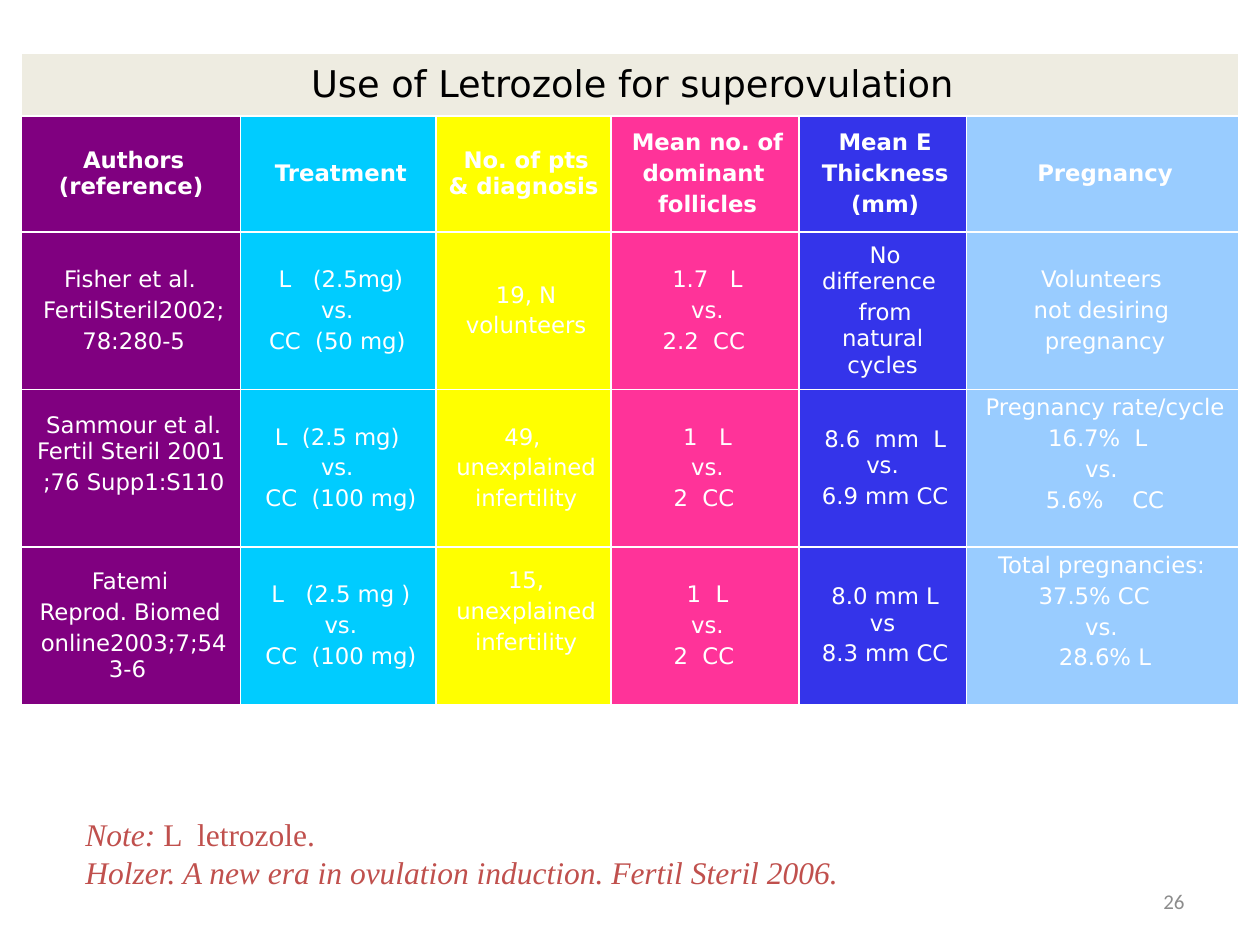
from lxml import etree
from pptx import Presentation
from pptx.dml.color import RGBColor
from pptx.enum.text import MSO_ANCHOR, PP_ALIGN
from pptx.oxml.ns import qn
from pptx.util import Inches, Pt

MIDDLE, TOP = MSO_ANCHOR.MIDDLE, MSO_ANCHOR.TOP
LEFT, CENTER, RIGHT = PP_ALIGN.LEFT, PP_ALIGN.CENTER, PP_ALIGN.RIGHT
COLORS = {"title": "EEECE1", "black": "000000", "white": "FFFFFF", "note": "C0504D", "number": "8C8C8C"}
COLUMNS = [(1.74, "800080"), (1.55, "00CCFF"), (1.39, "FFFF00"),
           (1.49, "FF3399"), (1.33, "3434EA"), (2.16, "99CCFF")]
ROW_HEIGHTS = [0.5, 0.92, 1.25, 1.25, 1.25]
TITLE = "Use of Letrozole for superovulation"
ROWS = [
    [["Authors (reference)"], ["Treatment"], ["No. of pts & diagnosis"],
     ["Mean no. of", "dominant ", "follicles"], ["Mean E", "Thickness", "(mm)"], ["Pregnancy"]],
    [["Fisher et al. ", "FertilSteril2002;", "78:280-5"], ["L   (2.5mg)", "vs. ", "CC  (50 mg) "],
     ["19, N", "volunteers"], ["1.7   L", "vs.", "2.2  CC "],
     ["No difference ", "from natural cycles"], ["Volunteers ", "not desiring ", "pregnancy"]],
    [["Sammour et al. Fertil Steril 2001", ";76 Supp1:S110"], ["L  (2.5 mg) ", "vs. ", "CC  (100 mg)"],
     ["49, ", "unexplained", "infertility"], ["1   L", "vs.", "2  CC "],
     ["8.6  mm  L vs.", "6.9 mm CC"], ["Pregnancy rate/cycle", "16.7%  L  ", "vs. ", "5.6%    CC"]],
    [["Fatemi ", "Reprod. Biomed ", "online2003;7;543-6 "], ["L   (2.5 mg )", " vs. ", "CC  (100 mg)"],
     ["15,", "unexplained", "infertility"], ["1  L", "vs.", "2  CC "],
     ["8.0 mm L vs", "8.3 mm CC"], ["Total pregnancies: ", "37.5% CC   ", "vs. ", "28.6% L"]],
]
RAISED = {(3, 0), (3, 5), (4, 2), (4, 5)}
NOTE = [[("Note: ", True), ("L  letrozole.", False)],
        [("Holzer. A new era in ovulation induction. Fertil Steril 2006.", True)]]


def add_run(p, text, font, size, color, bold=False, italic=False):
    r = p.add_run()
    r.text = text
    r.font.name, r.font.size = font, Pt(size)
    r.font.bold, r.font.italic = bold, italic
    r.font.color.rgb = RGBColor.from_string(color)


def next_paragraph(tf, i):
    return tf.add_paragraph() if i else tf.paragraphs[0]


def add_borders(cell):
    tc_pr = cell._tc.get_or_add_tcPr()
    for side in ("lnL", "lnR", "lnT", "lnB"):
        line = etree.SubElement(tc_pr, qn(f"a:{side}"), w=str(Pt(1)))
        fill = etree.SubElement(line, qn("a:solidFill"))
        etree.SubElement(fill, qn("a:srgbClr"), val=COLORS["white"])


def fill_cell(cell, lines, fill, color, size, bold=False):
    add_borders(cell)
    cell.fill.solid()
    cell.fill.fore_color.rgb = RGBColor.from_string(fill)
    cell.vertical_anchor = MIDDLE
    for i, line in enumerate(lines):
        p = next_paragraph(cell.text_frame, i)
        p.alignment = CENTER
        p.space_before = Pt(size * 0.2)
        p._p.get_or_add_pPr().set("indent", str(Inches(0.04)))
        add_run(p, line, "DejaVu Sans", size, color, bold)


def add_text(s, box, paragraphs, font, size, color, align, anchor):
    tf = s.shapes.add_textbox(*map(Inches, box)).text_frame
    tf.word_wrap = True
    tf.vertical_anchor = anchor
    for i, runs in enumerate(paragraphs):
        p = next_paragraph(tf, i)
        p.alignment = align
        for text, italic in runs:
            add_run(p, text, font, size, color, italic=italic)


def main():
    prs = Presentation()
    prs.slide_width, prs.slide_height = Inches(10), Inches(7.5)
    s = prs.slides.add_slide(prs.slide_layouts[6])

    width = sum(w for w, _ in COLUMNS)
    table = s.shapes.add_table(len(ROW_HEIGHTS), len(COLUMNS), Inches(0.17), Inches(0.42),
                               Inches(width), Inches(sum(ROW_HEIGHTS))).table
    for row, height in zip(table.rows, ROW_HEIGHTS):
        row.height = Inches(height)
    for column, (w, _) in zip(table.columns, COLUMNS):
        column.width = Inches(w)

    table.cell(0, 0).merge(table.cell(0, len(COLUMNS) - 1))
    fill_cell(table.cell(0, 0), [TITLE], COLORS["title"], COLORS["black"], 21)
    for r, row in enumerate(ROWS, 1):
        for c, (lines, (_, fill)) in enumerate(zip(row, COLUMNS)):
            cell = table.cell(r, c)
            fill_cell(cell, lines, fill, COLORS["white"], 13, bold=r == 1)
            if (r, c) in RAISED:
                cell.margin_top, cell.margin_bottom = 0, Inches(0.22)

    add_text(s, (7.17, 6.95, 2.33, 0.4), [[("26", False)]], "Calibri", 12, COLORS["number"], RIGHT, MIDDLE)
    add_text(s, (0.58, 6.42, 9.17, 0.7), NOTE, "Times New Roman", 18, COLORS["note"], LEFT, TOP)
    prs.save("out.pptx")


if __name__ == "__main__":
    main()
